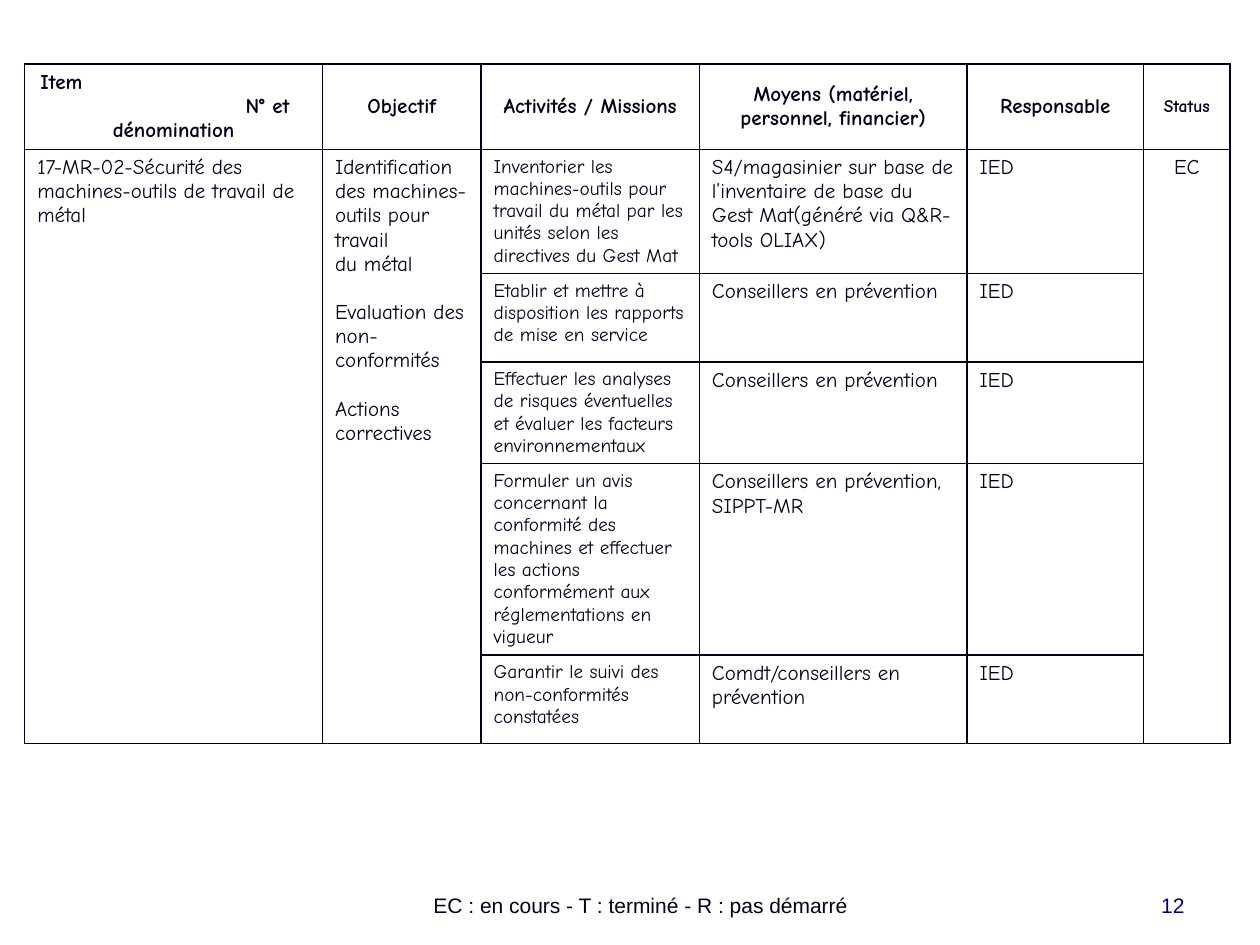
"""Build the action plan table slide for machine tool safety."""
import pptx
import pptx.util
import pptx.dml.color
import pptx.enum.text
import pptx.oxml
import pptx.oxml.ns

Pt = pptx.util.Pt
ALIGN = pptx.enum.text.PP_ALIGN
ANCHOR = pptx.enum.text.MSO_ANCHOR
INK = "000018"


def rgb(value):
    return pptx.dml.color.RGBColor.from_string(value)


def write(tf, text, size=12, font="Comic Neue", color=INK, bold=False,
          align=ALIGN.LEFT, gap=0):
    tf.word_wrap = True
    for i, line in enumerate(text.split("\n")):
        p = tf.paragraphs[0] if i == 0 else tf.add_paragraph()
        p.alignment = align
        p.space_before = Pt(gap if i else 0)
        r = p.add_run()
        r.text = line
        r.font.size = Pt(size)
        r.font.name = font
        r.font.bold = bold
        r.font.color.rgb = rgb(color)
    return tf.paragraphs


prs = pptx.Presentation()
prs.slide_width, prs.slide_height = Pt(720), Pt(540)
s = prs.slides.add_slide(prs.slide_layouts[6])

widths = [170.2, 90.6, 124.8, 153, 100.8, 49.5]
heights = [48.6, 70.9, 50.6, 58, 109.4, 50.6]
table = s.shapes.add_table(len(heights), len(widths), Pt(14.1), Pt(36.7),
                           Pt(sum(widths)), Pt(sum(heights))).table
table.first_row = table.horz_banding = False
for column, width in zip(table.columns, widths):
    column.width = Pt(width)
for row, height in zip(table.rows, heights):
    row.height = Pt(height)

for cell in table.iter_cells():
    tcPr = cell._tc.get_or_add_tcPr()
    for side in ("lnL", "lnR", "lnT", "lnB"):
        tcPr.append(pptx.oxml.parse_xml(
            f'<a:{side} {pptx.oxml.ns.nsdecls("a")} w="{Pt(1)}"><a:solidFill>'
            f'<a:srgbClr val="{INK}"/></a:solidFill></a:{side}>'))
    cell.fill.solid()
    cell.fill.fore_color.rgb = rgb("FFFFFF")

for col in (0, 1, 5):
    table.cell(1, col).merge(table.cell(5, col))

headers = ["Item\nN° et\ndénomination", "Objectif", "Activités / Missions",
           "Moyens (matériel, personnel, financier)", "Responsable", "Status"]
for col, text in enumerate(headers):
    cell = table.cell(0, col)
    cell.vertical_anchor = ANCHOR.MIDDLE
    write(cell.text_frame, text, bold=True, align=ALIGN.CENTER,
          size=10 if text == "Status" else 12)

item_lines = table.cell(0, 0).text_frame.paragraphs
for p, indent in zip(item_lines, (1.8, 119)):
    p.alignment = ALIGN.LEFT
    p._p.get_or_add_pPr().set("marL", str(Pt(indent)))

write(table.cell(1, 0).text_frame,
      "17-MR-02-Sécurité des machines-outils de travail de métal")
goals = write(table.cell(1, 1).text_frame,
              "Identification des machines-outils pour travail\ndu métal\n"
              "Evaluation des non-conformités\nActions correctives", gap=13.8)
goals[1].space_before = Pt(0)
write(table.cell(1, 5).text_frame, "EC", align=ALIGN.CENTER)

missions = [
    ("Inventorier les machines-outils pour travail du métal par les unités "
     "selon les directives du Gest Mat",
     "S4/magasinier sur base de l’inventaire de base du Gest Mat(généré via "
     "Q&R-tools OLIAX)"),
    ("Etablir et mettre à disposition les rapports de mise en service",
     "Conseillers en prévention"),
    ("Effectuer les analyses de risques éventuelles et évaluer les facteurs "
     "environnementaux", "Conseillers en prévention"),
    ("Formuler un avis concernant la conformité des machines et effectuer les "
     "actions conformément aux réglementations en vigueur",
     "Conseillers en prévention, SIPPT-MR"),
    ("Garantir le suivi des non-conformités constatées",
     "Comdt/conseillers en prévention"),
]
for row, (mission, means) in enumerate(missions, 1):
    write(table.cell(row, 2).text_frame, mission, size=11)
    write(table.cell(row, 3).text_frame, means)
    write(table.cell(row, 4).text_frame, "IED")

footers = [
    (167.8, 396.7, "EC : en cours - T : terminé - R : pas démarré", INK, ALIGN.CENTER),
    (516.2, 167.8, "12", "000080", ALIGN.RIGHT),
]
for left, width, text, color, align in footers:
    tf = s.shapes.add_textbox(Pt(left), Pt(491.8), Pt(width), Pt(36)).text_frame
    tf.vertical_anchor = ANCHOR.BOTTOM
    write(tf, text, font="Arial", color=color, align=align)

prs.save("out.pptx")
